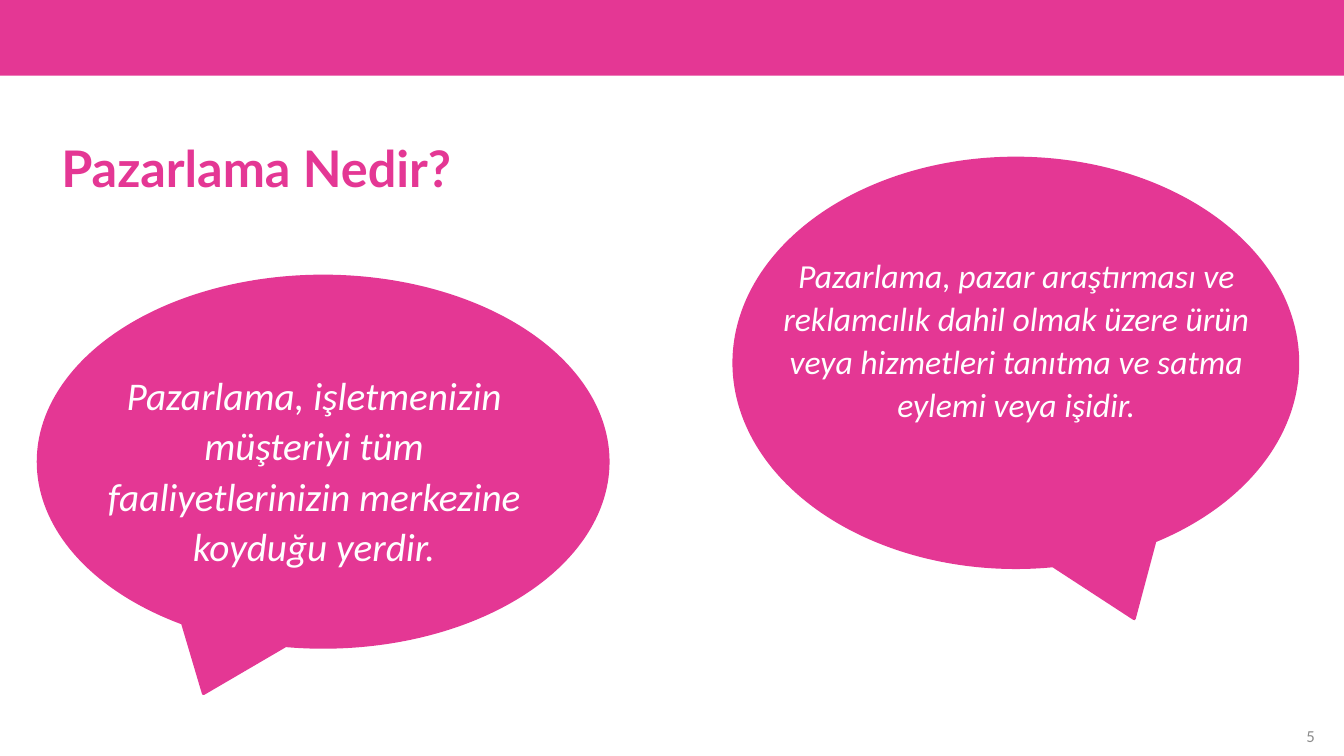
from dataclasses import dataclass

from pptx import Presentation
from pptx.dml.color import RGBColor
from pptx.enum.shapes import MSO_SHAPE as Preset
from pptx.enum.text import MSO_ANCHOR as Anchor, PP_ALIGN as Align
from pptx.shapes.autoshape import Shape
from pptx.slide import Slide
from pptx.util import Inches, Pt

COLORS = {"pink": "E43794", "white": "FFFFFF", "gray": "8C8C8C"}
Area = tuple[float, float, float, float]


@dataclass(frozen=True)
class Label:
    text: str
    area: Area
    size: int
    color: str
    font: str = "Calibri"
    align: Align = Align.LEFT
    anchor: Anchor = Anchor.TOP
    line_spacing: float = 1.0
    bold: bool = False
    italic: bool = False


@dataclass(frozen=True)
class Bubble:
    area: Area
    tail_x: float
    text: str
    text_area: Area
    text_size: int


BUBBLES = [
    Bubble(
        (0.38, 2.74, 5.65, 3.68), -0.21,
        "Pazarlama, işletmenizin müşteriyi tüm faaliyetlerinizin merkezine "
        "koyduğu yerdir.",
        (0.7, 3.6, 4.83, 2.63), 28,
    ),
    Bubble(
        (7.28, 1.57, 5.59, 4.06), 0.21,
        "Pazarlama, pazar araştırması ve reklamcılık dahil olmak üzere ürün "
        "veya hizmetleri tanıtma ve satma eylemi veya işidir.",
        (7.53, 2.45, 5.1, 3.25), 24,
    ),
]
TITLE = Label("Pazarlama Nedir?", (0.51, 1.38, 12.31, 0.69), 36, "pink",
              font="Lato", line_spacing=0.9, bold=True)
PAGE_NUMBER = Label("5", (8.44, 7.17, 4.7, 0.25), 12, "gray",
                    align=Align.RIGHT, anchor=Anchor.MIDDLE)


def color(name: str) -> RGBColor:
    return RGBColor.from_string(COLORS[name])


def add_pink_shape(page: Slide, preset: Preset, area: Area) -> Shape:
    shape = page.shapes.add_shape(preset, *map(Inches, area))
    shape.shadow.inherit = False
    shape.fill.solid()
    shape.fill.fore_color.rgb = color("pink")
    shape.line.fill.background()
    return shape


def add_label(page: Slide, label: Label) -> None:
    box = page.shapes.add_textbox(*map(Inches, label.area))
    frame = box.text_frame
    frame.word_wrap = True
    frame.vertical_anchor = label.anchor
    para = frame.paragraphs[0]
    para.alignment = label.align
    para.line_spacing = label.line_spacing
    span = para.add_run()
    span.text = label.text
    span.font.name = label.font
    span.font.size = Pt(label.size)
    span.font.bold = label.bold
    span.font.italic = label.italic
    span.font.color.rgb = color(label.color)


def add_bubble(page: Slide, bubble: Bubble) -> None:
    callout = add_pink_shape(page, Preset.OVAL_CALLOUT, bubble.area)
    callout.adjustments[0] = bubble.tail_x
    callout.adjustments[1] = 0.625
    callout.line.color.rgb = color("pink")
    callout.line.width = Pt(2.25)
    add_label(page, Label(bubble.text, bubble.text_area, bubble.text_size,
                          "white", align=Align.CENTER, line_spacing=1.07,
                          italic=True))


def main() -> None:
    deck = Presentation()
    deck.slide_width = Inches(13.33)
    deck.slide_height = Inches(7.5)
    page = deck.slides.add_slide(deck.slide_layouts[6])
    add_pink_shape(page, Preset.RECTANGLE, (0, 0, 13.33, 0.75))
    add_label(page, PAGE_NUMBER)
    add_label(page, TITLE)
    for bubble in BUBBLES:
        add_bubble(page, bubble)
    deck.save("out.pptx")


if __name__ == "__main__":
    main()
